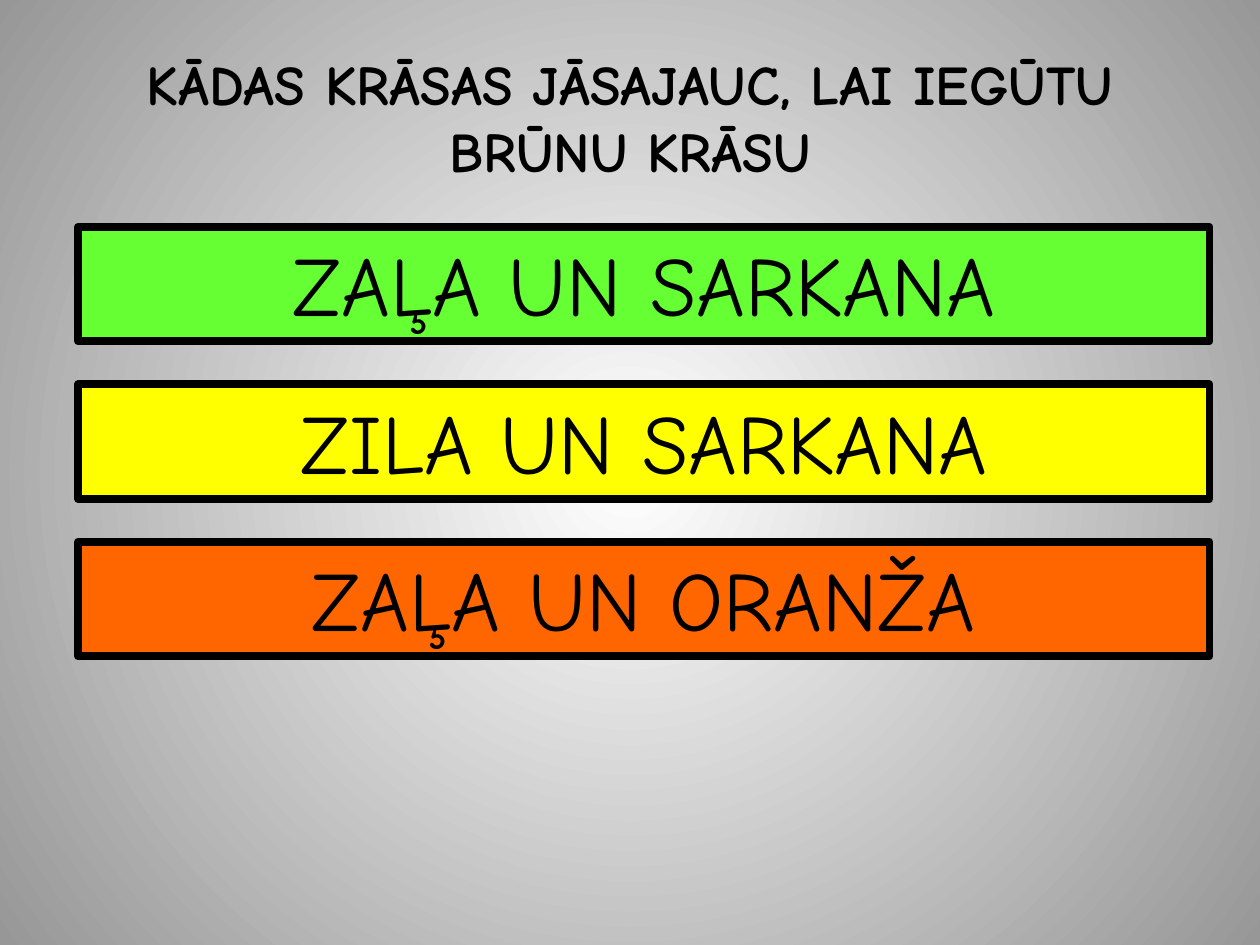
from dataclasses import dataclass

from lxml import etree
from pptx import Presentation
from pptx.dml.color import RGBColor
from pptx.enum.shapes import MSO_SHAPE
from pptx.enum.text import MSO_ANCHOR, MSO_AUTO_SIZE, PP_ALIGN
from pptx.oxml.ns import qn
from pptx.util import Inches, Pt

RECT = MSO_SHAPE.RECTANGLE
CENTER = PP_ALIGN.CENTER
TOP, MIDDLE = MSO_ANCHOR.TOP, MSO_ANCHOR.MIDDLE
NO_FIT, GROW = MSO_AUTO_SIZE.NONE, MSO_AUTO_SIZE.SHAPE_TO_FIT_TEXT
TITLE_ONLY = 5


@dataclass(frozen=True)
class Theme:
    font: str = "Comic Neue"
    ink: str = "000000"
    glow: str = "FFFFFF"
    edge: str = "979797"
    title_size: float = 32
    answer_size: float = 48
    border: float = 4.5


@dataclass(frozen=True)
class Answer:
    text: str
    color: str


@dataclass(frozen=True)
class Rows:
    """Column of equal bars, in inches."""
    left: float = 0.62
    top: float = 1.8
    width: float = 8.98
    height: float = 0.91
    pitch: float = 1.25


THEME = Theme()
ROWS = Rows()
TITLE = "KĀDAS KRĀSAS JĀSAJAUC, LAI IEGŪTU BRŪNU KRĀSU"
ANSWERS = [
    Answer("ZAĻA UN SARKANA", "66FF33"),
    Answer("ZILA UN SARKANA", "FFFF00"),
    Answer("ZAĻA UN ORANŽA", "FF6600"),
]


def rgb(color: str) -> RGBColor:
    return RGBColor.from_string(color)


def place(sp, left: float, top: float, width: float, height: float) -> None:
    sp.left, sp.top = Inches(left), Inches(top)
    sp.width, sp.height = Inches(width), Inches(height)


def write(tf, text: str, *, size: float, bold: bool = False,
          anchor=TOP, fit=NO_FIT) -> None:
    tf.word_wrap = True
    tf.auto_size = fit
    tf.vertical_anchor = anchor
    p = tf.paragraphs[0]
    p.alignment = CENTER
    r = p.add_run()
    r.text = text
    r.font.name = THEME.font
    r.font.size = Pt(size)
    r.font.bold = bold
    r.font.color.rgb = rgb(THEME.ink)


def radial_background(s) -> None:
    fill = s.background.fill
    fill.gradient()
    for stop, color in zip(fill.gradient_stops, (THEME.glow, THEME.edge)):
        stop.color.rgb = rgb(color)
    # Swap the linear direction for a circle around the centre
    grad = s.element.find(".//" + qn("a:gradFill"))
    lin = grad.find(qn("a:lin"))
    circle = etree.Element(qn("a:path"), {"path": "circle"})
    etree.SubElement(circle, qn("a:fillToRect"),
                     {side: "50000" for side in "ltrb"})
    grad.replace(lin, circle)


def draw_answer(s, row: int, answer: Answer) -> None:
    sp = s.shapes.add_shape(
        RECT, Inches(ROWS.left), Inches(ROWS.top + row * ROWS.pitch),
        Inches(ROWS.width), Inches(ROWS.height))
    sp.shadow.inherit = False
    sp.fill.solid()
    sp.fill.fore_color.rgb = rgb(answer.color)
    sp.line.color.rgb = rgb(THEME.ink)
    sp.line.width = Pt(THEME.border)
    write(sp.text_frame, answer.text, size=THEME.answer_size, fit=GROW)


def main() -> None:
    prs = Presentation()
    prs.slide_width, prs.slide_height = Inches(10), Inches(7.5)
    s = prs.slides.add_slide(prs.slide_layouts[TITLE_ONLY])
    radial_background(s)

    # Question
    title = s.shapes.title
    place(title, 0.5, 0.3, 9, 1.25)
    write(title.text_frame, TITLE, size=THEME.title_size, bold=True,
          anchor=MIDDLE)

    # Answer bars
    for row, answer in enumerate(ANSWERS):
        draw_answer(s, row, answer)

    prs.save("out.pptx")


if __name__ == "__main__":
    main()
